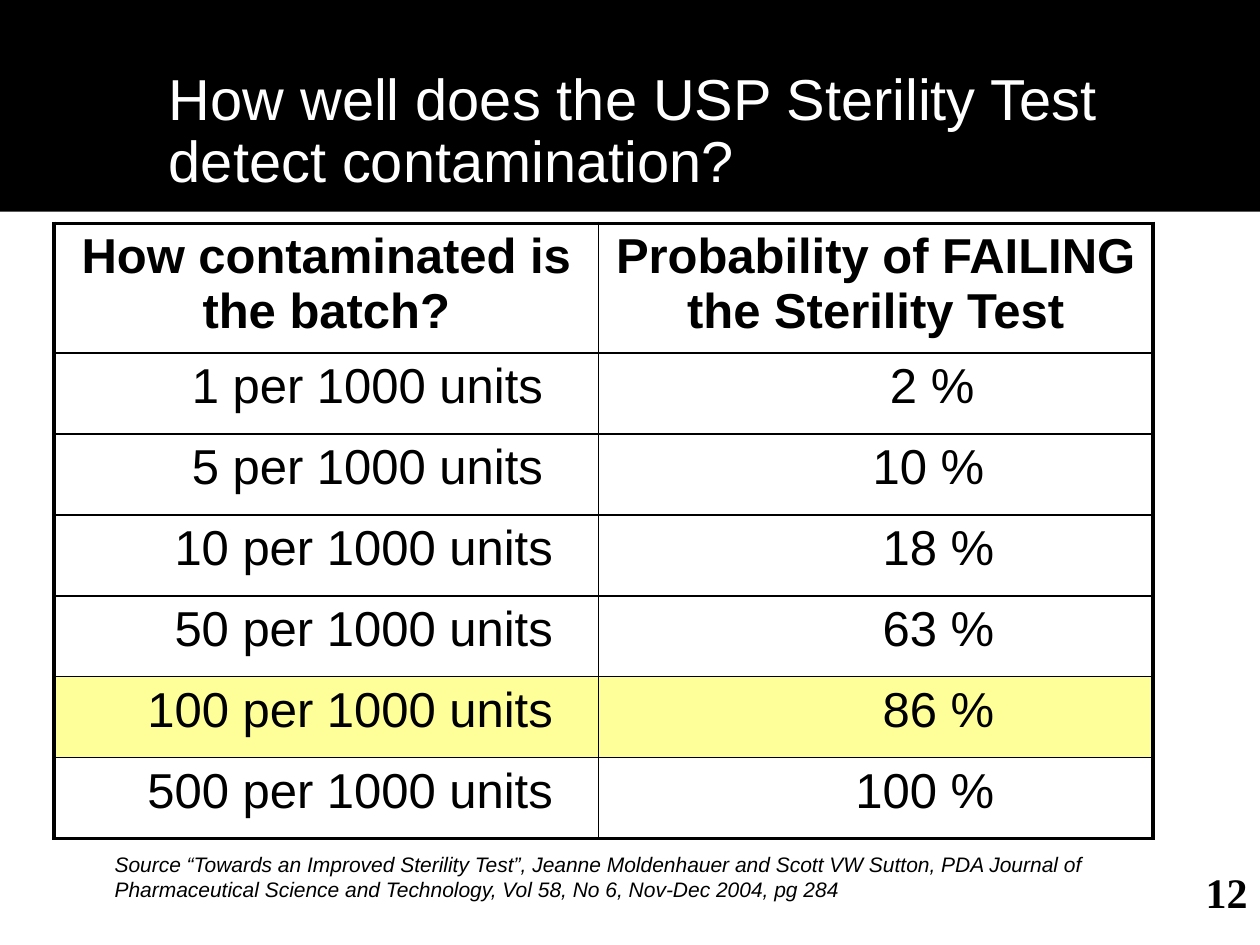
from lxml import etree
from pptx import Presentation
from pptx import util as u
from pptx.dml.color import RGBColor
from pptx.enum import shapes, text
from pptx.oxml.ns import qn

COLORS = {"ink": "000000", "paper": "FFFFFF", "highlight": "FFFF99"}

HEADING = "How well does the USP Sterility Test detect contamination?"
HEADERS = ("How contaminated is the batch?", "Probability of FAILING the Sterility Test")
# contamination, probability of failing, right inset in cm of each
RESULTS = [
    ("1 per 1000 units", "2 %", 1.12, 3.6),
    ("5 per 1000 units", "10 %", 1.12, 3.4),
    ("10 per 1000 units", "18 %", 0.92, 3.2),
    ("50 per 1000 units", "63 %", 0.92, 3.2),
    ("100 per 1000 units", "86 %", 0.92, 3.2),
    ("500 per 1000 units", "100 %", 0.92, 3.2),
]
HIGHLIGHTED = "100 per 1000 units"
SOURCE = ("Source “Towards an Improved Sterility Test”, Jeanne Moldenhauer and "
          "Scott VW Sutton, PDA Journal of Pharmaceutical Science and Technology, "
          "Vol 58, No 6, Nov-Dec 2004, pg 284")
PAGE = "12"

COLUMN_WIDTHS = (10.97, 11.18)
HEADER_HEIGHT, RESULT_HEIGHT = 2.62, 1.63
THIN, THICK = 1, 2.25


def rgb(name):
    return RGBColor.from_string(COLORS[name])


def write(frame, words, size, font="Arial", color="ink", align=text.PP_ALIGN.LEFT,
          bold=False, italic=False):
    paragraph = frame.paragraphs[0]
    paragraph.alignment = align
    run = paragraph.add_run()
    run.text = words
    run.font.name, run.font.size = font, u.Pt(size)
    run.font.bold, run.font.italic = bold, italic
    run.font.color.rgb = rgb(color)
    return paragraph


def add_note(slide, box, words, size, anchor=text.MSO_ANCHOR.TOP, **style):
    frame = slide.shapes.add_textbox(*map(u.Cm, box)).text_frame
    frame.word_wrap = True
    frame.vertical_anchor = anchor
    write(frame, words, size, **style)


def set_borders(cell, widths):
    """Draw the cell edges; widths maps L, R, T and B to points."""
    properties = cell._tc.get_or_add_tcPr()
    for side, width in widths.items():
        line = etree.SubElement(properties, qn(f"a:ln{side}"), w=str(u.Pt(width)))
        fill = etree.SubElement(line, qn("a:solidFill"))
        etree.SubElement(fill, qn("a:srgbClr"), val=COLORS["ink"])


def add_results(slide):
    row_count, column_count = len(RESULTS) + 1, len(HEADERS)
    heights = [HEADER_HEIGHT] + [RESULT_HEIGHT] * len(RESULTS)
    table = slide.shapes.add_table(
        row_count, column_count, u.Cm(1.09), u.Cm(4.5),
        u.Cm(sum(COLUMN_WIDTHS)), u.Cm(sum(heights))).table
    for column, width in zip(table.columns, COLUMN_WIDTHS):
        column.width = u.Cm(width)
    for row, height in zip(table.rows, heights):
        row.height = u.Cm(height)

    for r in range(row_count):
        words = HEADERS if r == 0 else RESULTS[r - 1][:2]
        insets = (0.25, 0.25) if r == 0 else RESULTS[r - 1][2:]
        fill = "highlight" if words[0] == HIGHLIGHTED else "paper"
        for c in range(column_count):
            cell = table.cell(r, c)
            cell.margin_right = u.Cm(insets[c])
            set_borders(cell, {
                "L": THICK if c == 0 else THIN,
                "R": THICK if c == column_count - 1 else THIN,
                "T": THICK if r == 0 else THIN,
                "B": THICK if r == row_count - 1 else THIN,
            })
            cell.fill.solid()
            cell.fill.fore_color.rgb = rgb(fill)
            align = text.PP_ALIGN.CENTER if r == 0 else text.PP_ALIGN.RIGHT
            write(cell.text_frame, words[c], 28, align=align, bold=r == 0)


def add_heading(slide):
    title = slide.shapes.title
    title.left, title.top, title.width, title.height = map(u.Cm, (3.15, 0.84, 21.9, 3.68))
    frame = title.text_frame
    frame.auto_size = text.MSO_AUTO_SIZE.NONE
    frame.vertical_anchor = text.MSO_ANCHOR.MIDDLE
    write(frame, HEADING, 33, color="paper").line_spacing = 0.9

    band = slide.shapes.add_shape(shapes.MSO_SHAPE.RECTANGLE, 0, 0, u.Cm(25.4), u.Cm(4.27))
    band.shadow.inherit = False
    band.fill.solid()
    band.fill.fore_color.rgb = rgb("ink")
    band.line.fill.background()
    title.element.addprevious(band.element)


def main():
    deck = Presentation()
    deck.slide_width, deck.slide_height = u.Cm(25.4), u.Cm(19.05)
    slide = deck.slides.add_slide(deck.slide_layouts[5])
    add_heading(slide)
    add_results(slide)
    add_note(slide, (2.06, 17.04, 20.7, 1.27), SOURCE, 12, italic=True)
    add_note(slide, (20.12, 17.35, 5.28, 1.27), PAGE, 24, text.MSO_ANCHOR.MIDDLE,
             font="Times New Roman", align=text.PP_ALIGN.RIGHT, bold=True)
    deck.save("out.pptx")


if __name__ == "__main__":
    main()
